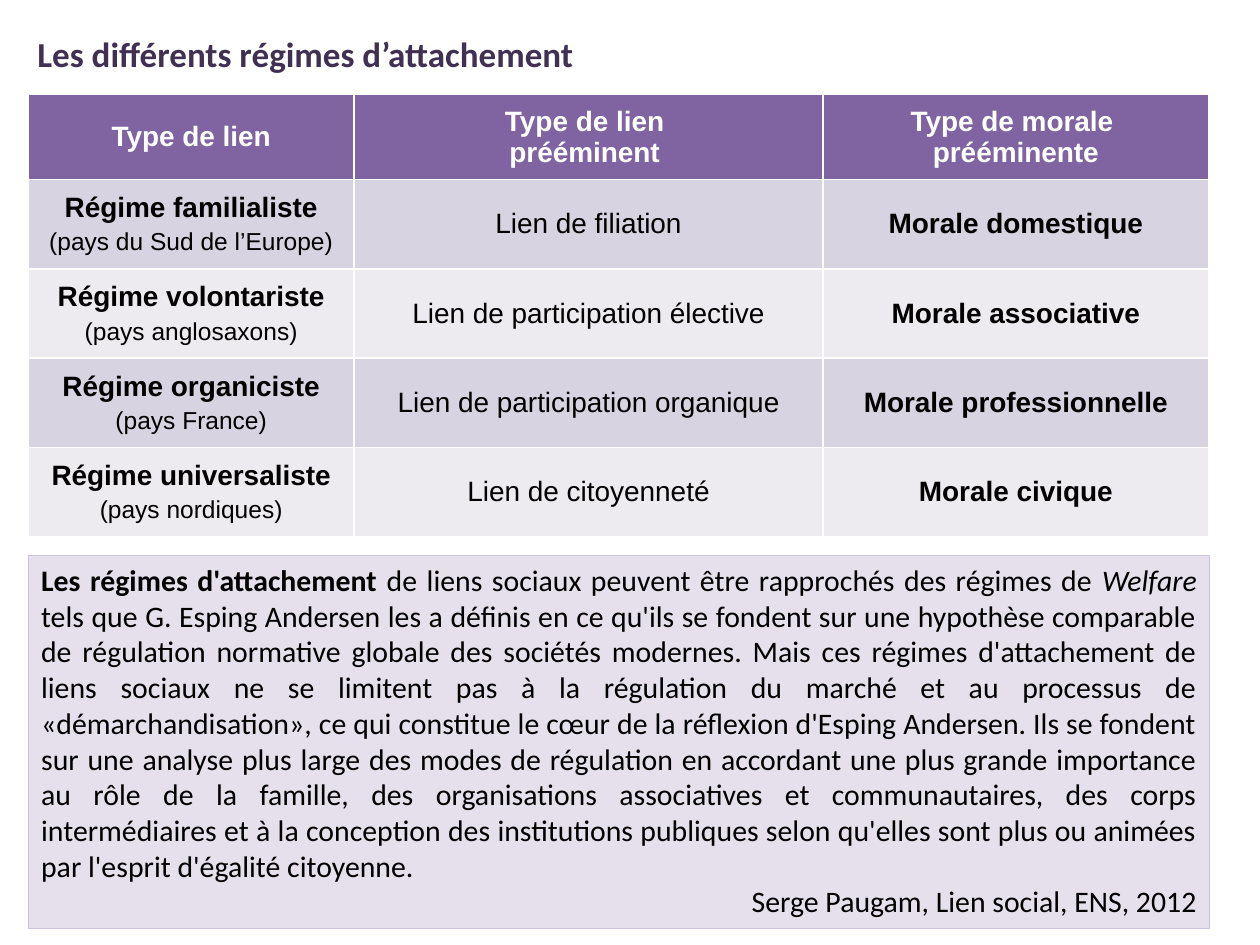
from pptx import Presentation
from pptx.dml.color import RGBColor
from pptx.enum.shapes import MSO_SHAPE as SHAPE
from pptx.enum.text import MSO_ANCHOR as ANCHOR, PP_ALIGN as ALIGN
from pptx.util import Cm, Pt

COLORS = {
    "title": "403152", "header": "8064A2", "odd": "D8D3E0", "even": "EDEAF0",
    "panel": "E6E0EC", "border": "CCC1DA", "white": "FFFFFF", "black": "000000",
}

HEADER = ["Type de lien", "Type de lien \nprééminent ", "Type de morale \nprééminente"]
REGIMES = [
    ("Régime familialiste\n(pays du Sud de l’Europe)", "Lien de filiation", "Morale domestique"),
    ("Régime volontariste\n(pays anglosaxons)", "Lien de participation élective", "Morale associative"),
    ("Régime organiciste\n(pays France)", "Lien de participation organique", "Morale professionnelle"),
    ("Régime universaliste\n(pays nordiques)", "Lien de citoyenneté", "Morale civique"),
]
QUOTE = [
    ("Les régimes d'attachement ", True, False),
    ("de liens sociaux peuvent être rapprochés des régimes de ", False, False),
    ("Welfare", False, True),
    (" tels que G. Esping Andersen les a définis en ce qu'ils se fondent sur une hypothèse "
     "comparable de régulation normative globale des sociétés modernes. Mais ces régimes "
     "d'attachement de liens sociaux ne se limitent pas à la régulation du marché et au "
     "processus de «démarchandisation», ce qui constitue le cœur de la réflexion d'Esping "
     "Andersen. Ils se fondent sur une analyse plus large des modes de régulation en accordant "
     "une plus grande importance au rôle de la famille, des organisations associatives et "
     "communautaires, des corps intermédiaires et à la conception des institutions publiques "
     "selon qu'elles sont plus ou animées par l'esprit d'égalité citoyenne.", False, False),
]
SOURCE = "Serge Paugam, Lien social, ENS, 2012"


class Deck:
    def __init__(self):
        self.prs = Presentation()
        self.prs.slide_width, self.prs.slide_height = Cm(25.4), Cm(19.05)
        self.s = self.prs.slides.add_slide(self.prs.slide_layouts[5])

    def color(self, name):
        return RGBColor.from_string(COLORS[name])

    def fill(self, target, name):
        target.fill.solid()
        target.fill.fore_color.rgb = self.color(name)

    def style(self, r, font, size, color="black", bold=False, italic=False):
        f = r.font
        f.name, f.size, f.bold, f.italic = font, Pt(size), bold, italic
        f.color.rgb = self.color(color)

    def title(self, text, x, y, w, h):
        sp = self.s.shapes.title
        sp.left, sp.top, sp.width, sp.height = Cm(x), Cm(y), Cm(w), Cm(h)
        tf = sp.text_frame
        tf.text = text
        tf.vertical_anchor = ANCHOR.TOP
        p = tf.paragraphs[0]
        p.alignment = ALIGN.LEFT
        self.style(p.runs[0], "Calibri", 20, "title", True)

    def cell(self, cell, text, fill, color, bold, note_size=None):
        self.fill(cell, fill)
        cell.vertical_anchor = ANCHOR.MIDDLE
        cell.text_frame.text = text
        for i, p in enumerate(cell.text_frame.paragraphs):
            note = note_size and i > 0
            p.alignment = ALIGN.CENTER
            if note:
                p.space_before = Pt(3)
            self.style(p.runs[0], "Arial", note_size if note else 16, color, bold and not note)

    def table(self, header, rows, x, y, widths, heights):
        table = self.s.shapes.add_table(
            len(rows) + 1, len(header), Cm(x), Cm(y), Cm(sum(widths)), Cm(sum(heights))).table
        for col, w in zip(table.columns, widths):
            col.width = Cm(w)
        for row, h in zip(table.rows, heights):
            row.height = Cm(h)
        for c, text in enumerate(header):
            self.cell(table.cell(0, c), text, "header", "white", True)
        for r, row in enumerate(rows, 1):
            for c, text in enumerate(row):
                self.cell(table.cell(r, c), text, "odd" if r % 2 else "even",
                          "black", c != 1, 14)

    def quote(self, runs, source, x, y, w, h):
        sp = self.s.shapes.add_shape(SHAPE.RECTANGLE, Cm(x), Cm(y), Cm(w), Cm(h))
        sp.shadow.inherit = False
        self.fill(sp, "panel")
        sp.line.color.rgb = self.color("border")
        sp.line.width = Pt(0.75)
        tf = sp.text_frame
        tf.word_wrap = True
        tf.vertical_anchor = ANCHOR.TOP
        paragraphs = [(tf.paragraphs[0], ALIGN.JUSTIFY, runs),
                      (tf.add_paragraph(), ALIGN.RIGHT, [(source, False, False)])]
        for p, align, parts in paragraphs:
            p.alignment = align
            for text, bold, italic in parts:
                r = p.add_run()
                r.text = text
                self.style(r, "Calibri", 17, bold=bold, italic=italic)


def main():
    deck = Deck()
    deck.title("Les différents régimes d’attachement", 0.5, 0.53, 19, 1.11)
    deck.table(HEADER, REGIMES, 0.57, 1.91, [6.57, 9.45, 7.78], [1.71] + [1.8] * 4)
    deck.quote(QUOTE, SOURCE, 0.58, 11.2, 23.8, 7.52)
    deck.prs.save("out.pptx")


if __name__ == "__main__":
    main()
